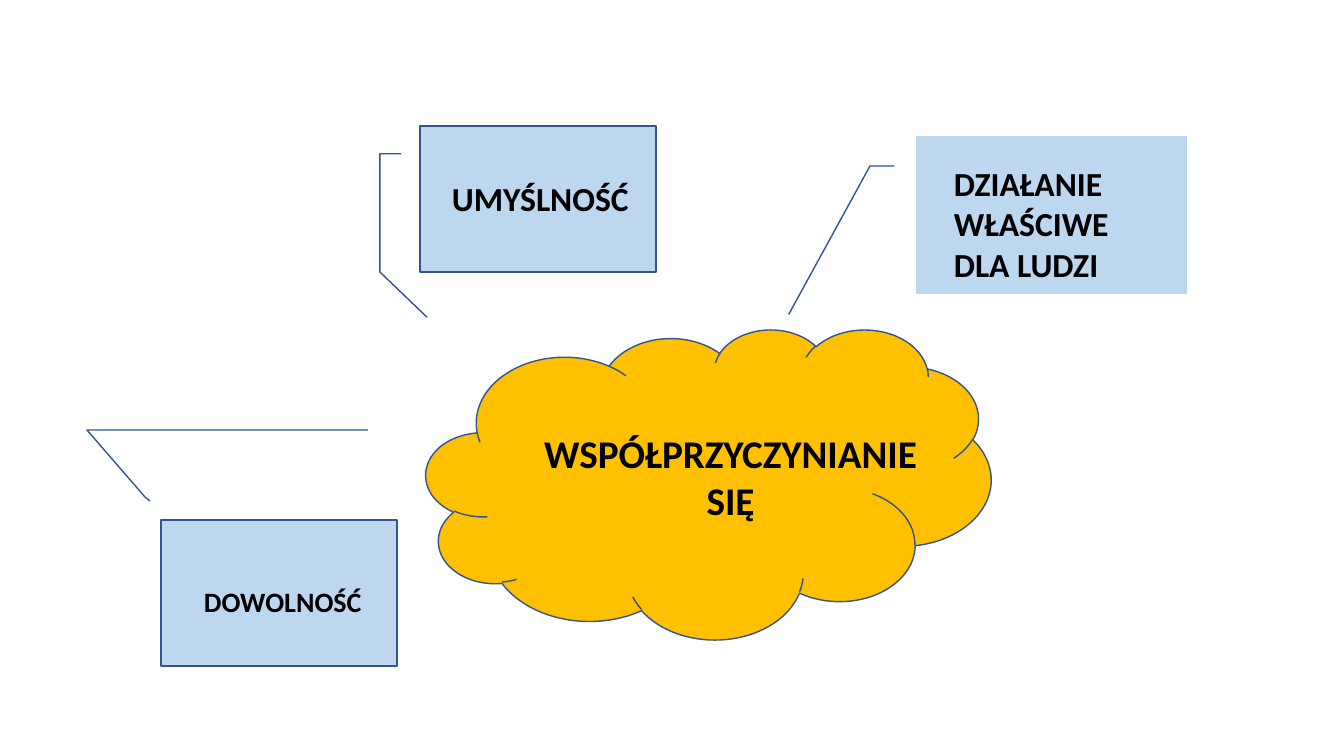
from pptx import Presentation
from pptx.dml.color import RGBColor
from pptx.enum.shapes import MSO_SHAPE
from pptx.enum.text import MSO_AUTO_SIZE, PP_ALIGN
from pptx.util import Emu, Pt

SCALE = 12192000 / 1344
COLORS = {"box": "BDD7EE", "cloud": "FFC000", "line": "325491", "text": "000000"}


def px(*vals):
    return [Emu(round(v * SCALE)) for v in vals]


def style(shape, fill=None):
    shape.shadow.inherit = False
    shape.line.color.rgb = RGBColor.from_string(COLORS["line"])
    shape.line.width = Pt(1)
    if fill:
        shape.fill.solid()
        shape.fill.fore_color.rgb = RGBColor.from_string(COLORS[fill])
    else:
        shape.fill.background()


deck = Presentation()
deck.slide_width, deck.slide_height = px(1344, 756)
slide = deck.slides.add_slide(deck.slide_layouts[6])
shapes = slide.shapes

NODES = [
    (MSO_SHAPE.LINE_CALLOUT_2_NO_BORDER, (916, 136, 271, 158), "box",
     [0.19, -0.08, 0.19, -0.17, 1.13, -0.47],
     "DZIAŁANIE WŁAŚCIWE DLA LUDZI", (944, 158, 225, 132), 24, PP_ALIGN.LEFT),
    (MSO_SHAPE.CLOUD, (426, 329, 565, 310), "cloud", [],
     "WSPÓŁPRZYCZYNIANIE SIĘ", (529, 424, 403, 105), 28, PP_ALIGN.CENTER),
    (MSO_SHAPE.LINE_CALLOUT_3, (420, 126, 236, 146), "box",
     [0.19, -0.08, 0.19, -0.17, 1, -0.17, 1.31, 0.03],
     "UMYŚLNOŚĆ", (442, 173, 215, 50), 24, PP_ALIGN.LEFT),
    (MSO_SHAPE.RECTANGLE, (161, 520, 236, 146), "box", [],
     "DOWOLNOŚĆ", (194, 580, 209, 44), 20, PP_ALIGN.LEFT),
]

for kind, area, fill, bends, words, place, size, align in NODES:
    node = shapes.add_shape(kind, *px(*area))
    style(node, fill)
    for i, bend in enumerate(bends):
        node.adjustments[i] = bend
    label = shapes.add_textbox(*px(*place))
    frame = label.text_frame
    frame.word_wrap = True
    frame.auto_size = MSO_AUTO_SIZE.SHAPE_TO_FIT_TEXT
    para = frame.paragraphs[0]
    para.alignment = align
    run = para.add_run()
    run.text = words
    for key, val in {"name": "Calibri", "size": Pt(size), "bold": True}.items():
        setattr(run.font, key, val)
    run.font.color.rgb = RGBColor.from_string(COLORS["text"])

pen = shapes.build_freeform(368, 430, scale=SCALE)
pen.add_line_segments([(87, 430), (145, 497), (150, 501)], close=False)
style(pen.convert_to_shape())

deck.save("out.pptx")
